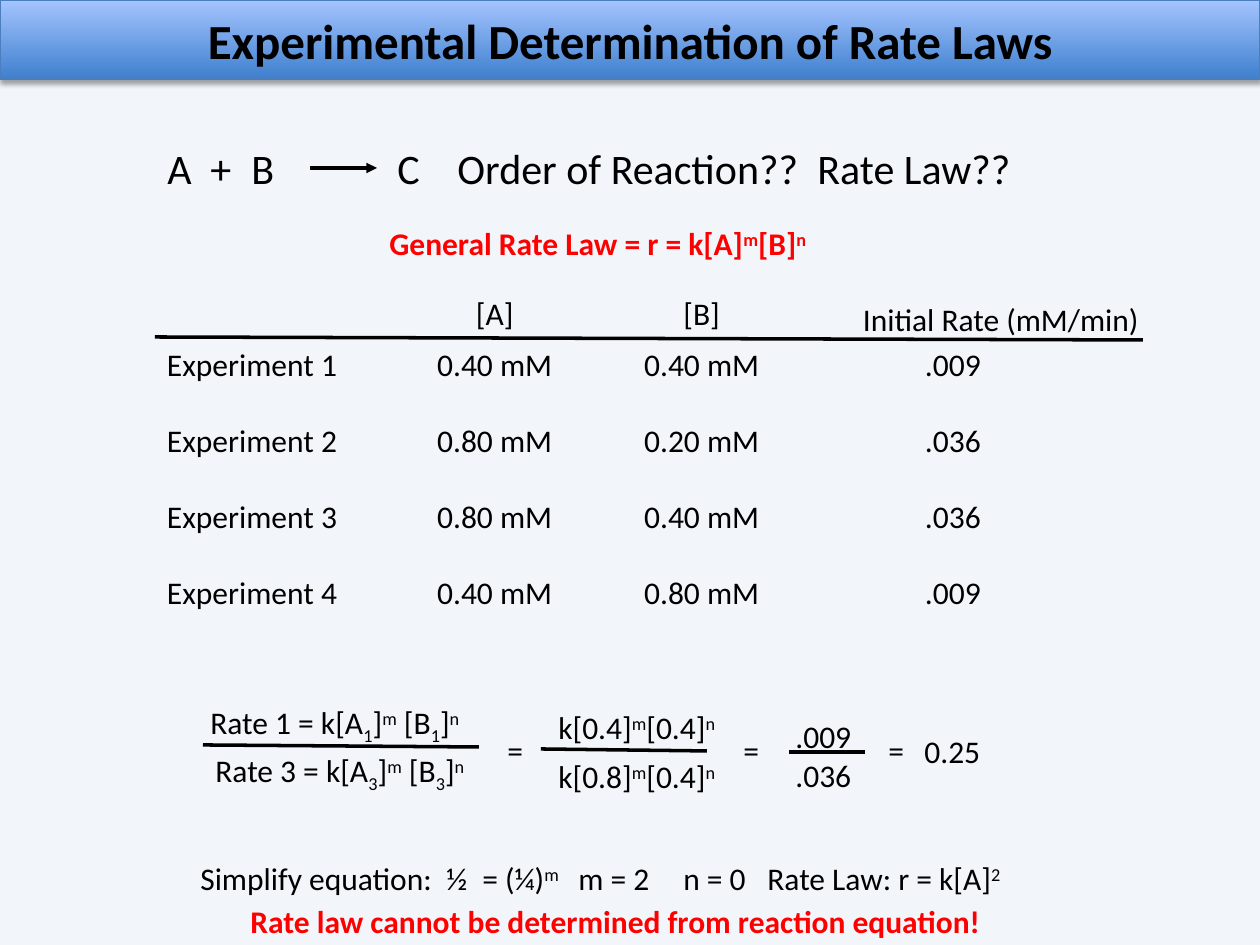
from lxml import etree
from pptx import Presentation
from pptx.dml.color import RGBColor
from pptx.enum.shapes import MSO_CONNECTOR as Link
from pptx.enum.text import MSO_ANCHOR as Anchor, MSO_AUTO_SIZE as Fit, PP_ALIGN as Align
from pptx.oxml import parse_xml
from pptx.oxml.ns import nsdecls, qn
from pptx.util import Emu, Pt

PX = 914400 // 126
FONT = "Calibri"
COLORS = {"back": "F2F6FA", "ink": "000000", "red": "FF0000",
          "deep": "3F80CE", "pale": "A4C4FF", "edge": "4B7EBC"}

# In texts, ^ raises and _ lowers the next character.
TITLE = "Experimental Determination of Rate Laws"
HEADS = ["", "[A]", "[B]", "Initial Rate (mM/min)"]
ROWS = [
    ("Experiment 1", "0.40 mM", "0.40 mM", ".009"),
    ("Experiment 2", "0.80 mM", "0.20 mM", ".036"),
    ("Experiment 3", "0.80 mM", "0.40 mM", ".036"),
    ("Experiment 4", "0.40 mM", "0.80 mM", ".009"),
]
COLS = [235, 210, 204, 339]
TABLE = (155, 287)
HEAD_H, ROW_H = 53, 76

# text, left, top, width, format
NOTES = [
    ("A\t+\tB\tC\tOrder of Reaction??\tRate Law??", 155, 136, 890,
     dict(size=24, tabs=(43, 84, 230, 290, 650))),
    ("General Rate Law = r = k[A]^m[B]^n", 377, 218, 447,
     dict(color="red", bold=True)),
    ("Simplify equation:\t½\t= (¼)^m\tm = 2\tn = 0\tRate Law: r = k[A]^2",
     188, 853, 870, dict(tabs=(246, 282, 378, 483, 567))),
    ("Rate law cannot be determined from reaction equation!", 238, 896, 762,
     dict(color="red", bold=True)),
]
TERMS = [
    ("Rate 1 = k[A_1]^m [B_1]^n", 198, 697, 281),
    ("Rate 3 = k[A_3]^m [B_3]^n", 203, 745, 281),
    ("=", 495, 725, 42),
    ("k[0.4]^m[0.4]^n", 546, 702, 188),
    ("k[0.8]^m[0.4]^n", 546, 751, 188),
    ("=", 731, 725, 42),
    (".009", 783, 711, 82),
    (".036", 783, 750, 82),
    ("=", 876, 725, 42),
    ("0.25", 912, 726, 82),
]
RULES = [(155, 337, 1143, 340), (203, 745, 479, 747),
         (541, 749, 707, 751), (789, 752, 865, 752)]
ARROW = (310, 168, 377, 168)


def px(n):
    return Emu(n * PX)


def rgb(name):
    return RGBColor.from_string(COLORS[name])


def split(text):
    """Yield (piece, baseline) pairs from marked text."""
    piece, base = "", 0
    for char in text:
        if char in "^_":
            if piece:
                yield piece, 0
            piece, base = "", 30000 if char == "^" else -25000
        elif base:
            yield char, base
            base = 0
        else:
            piece += char
    if piece:
        yield piece, 0


def write(frame, text, size=18, color="ink", bold=False, align=Align.LEFT, tabs=()):
    para = frame.paragraphs[0]
    para.alignment = align
    if tabs:
        stops = etree.SubElement(para._p.get_or_add_pPr(), qn("a:tabLst"))
        for pos in tabs:
            etree.SubElement(stops, qn("a:tab"), pos=str(px(pos)), algn="l")
    for piece, base in split(text):
        run = para.add_run()
        run.text = piece
        font = run.font
        font.name, font.size, font.bold = FONT, Pt(size), bold
        font.color.rgb = rgb(color)
        if base:
            run._r.get_or_add_rPr().set("baseline", str(base))


def note(slide, text, left, top, width, **style):
    size = style.get("size", 18)
    box = slide.shapes.add_textbox(px(left), px(top), px(width), px(63 if size > 18 else 50))
    box.text_frame.word_wrap = "tabs" in style
    write(box.text_frame, text, **style)


def rule(slide, ends, arrow=False):
    line = slide.shapes.add_connector(Link.STRAIGHT, *map(px, ends))
    line.line.color.rgb = rgb("ink")
    line.line.width = Pt(2)
    if arrow:
        etree.SubElement(line.line._get_or_add_ln(), qn("a:tailEnd"), type="triangle")
    etree.SubElement(line._element.spPr, qn("a:effectLst"))


def banner(slide):
    bar = slide.shapes.title
    bar.left, bar.top, bar.width, bar.height = map(px, (0, 0, 1260, 79))
    bar.fill.gradient()
    bar.fill.gradient_angle = 90
    for stop, name in zip(bar.fill.gradient_stops, ("deep", "pale")):
        stop.color.rgb = rgb(name)
    bar.line.color.rgb = rgb("edge")
    bar.line.width = Pt(0.75)
    bar._element.spPr.append(parse_xml(
        f'<a:effectLst {nsdecls("a")}><a:outerShdw blurRad="39370" dist="22860" '
        'dir="5400000" rotWithShape="0"><a:srgbClr val="000000">'
        '<a:alpha val="35000"/></a:srgbClr></a:outerShdw></a:effectLst>'))
    frame = bar.text_frame
    frame.auto_size = Fit.NONE
    frame.vertical_anchor = Anchor.MIDDLE
    write(frame, TITLE, size=28, bold=True, align=Align.CENTER)


def grid(slide):
    high = HEAD_H + ROW_H * len(ROWS)
    shape = slide.shapes.add_table(len(ROWS) + 1, len(COLS), *map(px, TABLE),
                                   px(sum(COLS)), px(high))
    table = shape.table
    table.first_row = table.horz_banding = False
    style = table._tbl.tblPr.find(qn("a:tableStyleId"))
    style.text = "{2D5ABB26-0587-4C30-8999-92F81FD0307C}"  # no style, no grid
    for col, width in zip(table.columns, COLS):
        col.width = px(width)
    for r, row in enumerate([HEADS, *ROWS]):
        table.rows[r].height = px(ROW_H if r else HEAD_H)
        for c, text in enumerate(row):
            cell = table.cell(r, c)
            cell.fill.background()
            cell.vertical_anchor = Anchor.TOP if r else Anchor.BOTTOM
            cell.margin_left = px(12)
            if c == 3:
                cell.margin_left = px(121 if r else 59)
                cell.margin_right = cell.margin_bottom = 0
            write(cell.text_frame, text, align=Align.CENTER if c in (1, 2) else Align.LEFT)


def main():
    deck = Presentation()
    deck.slide_width, deck.slide_height = px(1260), px(945)
    slide = deck.slides.add_slide(deck.slide_layouts[5])
    slide.background.fill.solid()
    slide.background.fill.fore_color.rgb = rgb("back")
    banner(slide)
    grid(slide)
    for text, left, top, width, style in NOTES:
        note(slide, text, left, top, width, **style)
    for term in TERMS:
        note(slide, *term)
    for ends in RULES:
        rule(slide, ends)
    rule(slide, ARROW, arrow=True)
    deck.save("out.pptx")


if __name__ == "__main__":
    main()
